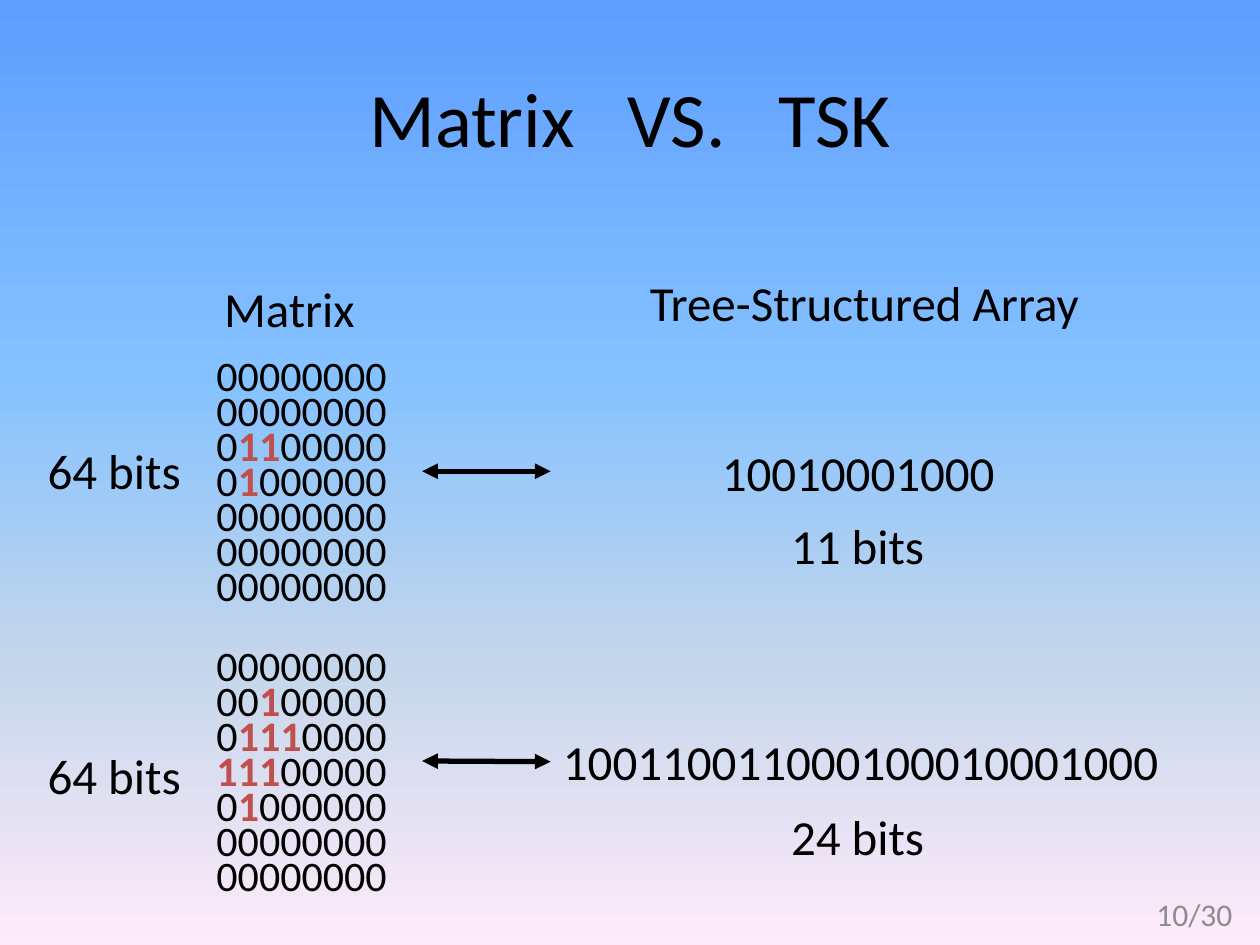
import dataclasses
import itertools

import lxml.etree
import pptx
import pptx.dml.color
import pptx.enum.shapes
import pptx.enum.text
import pptx.oxml.ns
import pptx.util

RGBColor = pptx.dml.color.RGBColor
BLACK = RGBColor(0x00, 0x00, 0x00)
RED = RGBColor(0xC0, 0x50, 0x4D)
GREY = RGBColor(0x8C, 0x8C, 0x8C)
BACKGROUND_STOPS = (
    (0, RGBColor(0x5E, 0x9E, 0xFF)),
    (40, RGBColor(0x85, 0xC2, 0xFF)),
    (70, RGBColor(0xC4, 0xD6, 0xEB)),
    (100, RGBColor(0xFF, 0xEB, 0xFA)),
)
FONT = "Calibri"
CELL = pptx.util.Inches(0.1)  # grid of 100 columns by 75 rows
LABEL_SIZE = (13.4, 5.7)
MATRIX_LEFT, MATRIX_WIDTH, MATRIX_HEIGHT = 16.2, 17.3, 23.4
MATRIX_LINE = pptx.util.Pt(20)
ARROW_END = 43.7
ALIGN = pptx.enum.text.PP_ALIGN
ANCHOR = pptx.enum.text.MSO_ANCHOR
qn = pptx.oxml.ns.qn


@dataclasses.dataclass(frozen=True)
class Box:
    """A rectangle in grid columns and rows."""
    left: float
    top: float
    width: float
    height: float

    def lengths(self) -> tuple:
        return tuple(grid(value) for value in dataclasses.astuple(self))


@dataclasses.dataclass(frozen=True)
class Comparison:
    matrix_top: float
    matrix: tuple
    label_top: float
    code: str
    code_box: Box
    code_bits: str
    bits_top: float


HEADINGS = (
    ("Matrix", Box(16.8, 21.6, 15.1, 6.5)),
    ("Tree-Structured Array", Box(50.6, 21.1, 37.2, 6.5)),
)
COMPARISONS = (
    Comparison(
        25.7,
        ("00000000", "00000000", "01100000", "01000000",
         "00000000", "00000000", "00000000"),
        34.5, "10010001000", Box(56.3, 34.6, 25.2, 5.7), "11 bits", 40.4),
    Comparison(
        48.7,
        ("00000000", "00100000", "01110000", "11100000",
         "01000000", "00000000", "00000000"),
        58.7, "100110011000100010001000", Box(43.7, 57.6, 50.4, 5.7), "24 bits", 63.5),
)


def grid(cells: float) -> int:
    return round(cells * CELL)


def format_run(run, size: float, color: RGBColor = BLACK, bold: bool = False) -> None:
    run.font.name = FONT
    run.font.size = pptx.util.Pt(size)
    run.font.color.rgb = color
    run.font.bold = bold


def add_text(slide, text: str, box: Box, size: float = 28, color: RGBColor = BLACK):
    shape = slide.shapes.add_textbox(*box.lengths())
    shape.text_frame.word_wrap = True
    shape.text_frame.text = text
    format_run(shape.text_frame.paragraphs[0].runs[0], size, color)
    return shape


def add_matrix(slide, rows: tuple, top: float):
    """Draw the bit rows, with the ones in bold red."""
    box = Box(MATRIX_LEFT, top, MATRIX_WIDTH, MATRIX_HEIGHT)
    shape = slide.shapes.add_textbox(*box.lengths())
    text_frame = shape.text_frame
    text_frame.word_wrap = True
    text_frame.margin_top += MATRIX_LINE
    for index, row in enumerate(rows):
        paragraph = text_frame.add_paragraph() if index else text_frame.paragraphs[0]
        paragraph.line_spacing = MATRIX_LINE
        for bit, group in itertools.groupby(row):
            run = paragraph.add_run()
            run.text = "".join(group)
            is_one = bit == "1"
            format_run(run, 24, RED if is_one else BLACK, is_one)
    return shape


def add_double_arrow(slide, matrix, code) -> None:
    """Join the matrix to its code, where the code box reaches the arrow."""
    middle = matrix.top + matrix.height // 2
    arrow = slide.shapes.add_connector(
        pptx.enum.shapes.MSO_CONNECTOR.STRAIGHT,
        grid(ARROW_END), middle, matrix.left + matrix.width, middle)
    if code.left == grid(ARROW_END):
        arrow.begin_connect(code, 1)
    arrow.end_connect(matrix, 3)
    arrow.line.color.rgb = BLACK
    arrow.line.width = pptx.util.Pt(3)
    properties = arrow.element.spPr
    line = properties.find(qn("a:ln"))
    for end in ("a:headEnd", "a:tailEnd"):
        lxml.etree.SubElement(line, qn(end), type="triangle")
    lxml.etree.SubElement(properties, qn("a:effectLst"))


def add_comparison(slide, comparison: Comparison) -> None:
    matrix = add_matrix(slide, comparison.matrix, comparison.matrix_top)
    code = add_text(slide, comparison.code, comparison.code_box)
    add_text(slide, "64 bits", Box(2.8, comparison.label_top, *LABEL_SIZE))
    add_text(slide, comparison.code_bits, Box(61.8, comparison.bits_top, *LABEL_SIZE))
    add_double_arrow(slide, matrix, code)


def set_background(slide) -> None:
    fill = slide.background.fill
    fill.gradient()
    fill.gradient_angle = 270
    stops = slide.element.find(".//" + qn("a:gsLst"))
    for stop in list(stops):
        stops.remove(stop)
    for percent, color in BACKGROUND_STOPS:
        stop = lxml.etree.SubElement(stops, qn("a:gs"), pos=str(percent * 1000))
        lxml.etree.SubElement(stop, qn("a:srgbClr"), val=str(color))


def set_title(slide) -> None:
    """Write the title, its words set apart by widened spaces."""
    title = slide.shapes.title
    title.left, title.top, title.width, title.height = Box(5, 3, 90, 12.5).lengths()
    title.text_frame.vertical_anchor = ANCHOR.MIDDLE
    paragraph = title.text_frame.paragraphs[0]
    paragraph.alignment = ALIGN.CENTER
    for text in ("Matrix", " ", "VS.", " ", "TSK"):
        run = paragraph.add_run()
        run.text = text
        format_run(run, 44)
        if text == " ":
            run.font._element.set("spc", "2000")


def main() -> None:
    presentation = pptx.Presentation()
    presentation.slide_width = grid(100)
    presentation.slide_height = grid(75)
    slide = presentation.slides.add_slide(presentation.slide_layouts[5])
    set_background(slide)
    set_title(slide)
    for text, box in HEADINGS:
        add_text(slide, text, box)
    for comparison in COMPARISONS:
        add_comparison(slide, comparison)
    page_number = add_text(slide, "10/30", Box(75.5, 70.5, 23.3, 4), 18, GREY)
    page_number.text_frame.vertical_anchor = ANCHOR.MIDDLE
    page_number.text_frame.paragraphs[0].alignment = ALIGN.RIGHT
    presentation.save("out.pptx")


if __name__ == "__main__":
    main()
